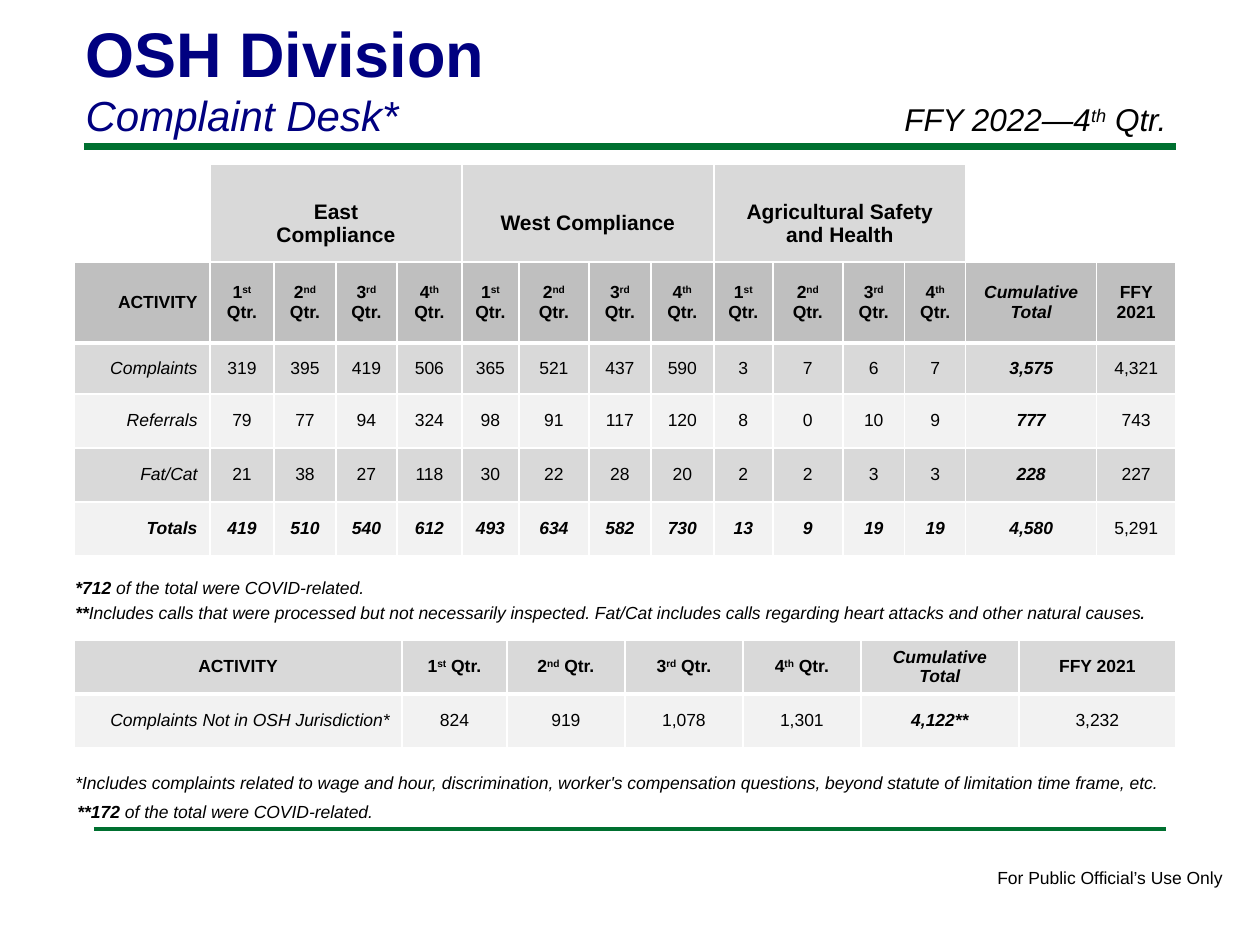
"""Build the OSH Division complaint desk slide with its quarterly activity tables."""
from dataclasses import dataclass

from lxml import etree
from pptx import Presentation, util as u
from pptx.dml.color import RGBColor
from pptx.enum import shapes, text
from pptx.oxml import ns


@dataclass(frozen=True)
class Theme:
    font: str = "Arial"
    navy: str = "000080"
    black: str = "000000"
    green: str = "007030"
    border: str = "FFFFFF"
    dark: str = "BFBFBF"
    mid: str = "D9D9D9"
    light: str = "F2F2F2"
    title: int = 36
    subtitle: int = 24
    period: int = 18
    region: int = 12
    body: int = 10


THEME = Theme()
PX = 914400 // 126
LEFT, CENTER, RIGHT = text.PP_ALIGN.LEFT, text.PP_ALIGN.CENTER, text.PP_ALIGN.RIGHT


def quarter(number, suffix):
    return [(number, ""), (suffix, "^"), (" Qtr.", "")]


QUARTERS = [quarter("1", "st"), quarter("2", "nd"), quarter("3", "rd"), quarter("4", "th")]
SUMMARY = ["Cumulative Total", "FFY 2021"]


def header_styles(quarters):
    return ["b"] * (quarters + 1) + ["bi", "b"]


def value_styles(quarters):
    return ["i"] + [""] * quarters + ["bi", ""]


REGIONS = dict(
    place=(210, 164), widths=[252] * 3, heights=[119], size=THEME.region, first=CENTER,
    rows=[(THEME.mid, ["b"] * 3,
           ["East\nCompliance", "West Compliance", "Agricultural Safety and Health"])])

JURISDICTION = dict(
    place=(74, 640), widths=[328, 105, 118, 118, 118, 158, 157], heights=[54, 54],
    size=THEME.body, first=CENTER,
    rows=[(THEME.mid, header_styles(4), ["ACTIVITY", *QUARTERS, *SUMMARY]),
          (THEME.light, value_styles(4),
           ["Complaints Not in OSH Jurisdiction*", "824", "919", "1,078", "1,301",
            "4,122**", "3,232"])])

ACTIVITY = dict(
    place=(74, 262),
    widths=[136, 64, 62, 61, 65, 57, 70, 62, 63, 59, 70, 62, 61, 131, 79],
    heights=[81, 51, 54, 54, 54], size=THEME.body, first=RIGHT,
    rows=[(THEME.dark, header_styles(12), ["ACTIVITY", *QUARTERS * 3, *SUMMARY]),
          (THEME.mid, value_styles(12),
           ["Complaints", "319", "395", "419", "506", "365", "521", "437", "590",
            "3", "7", "6", "7", "3,575", "4,321"]),
          (THEME.light, value_styles(12),
           ["Referrals", "79", "77", "94", "324", "98", "91", "117", "120",
            "8", "0", "10", "9", "777", "743"]),
          (THEME.mid, value_styles(12),
           ["Fat/Cat", "21", "38", "27", "118", "30", "22", "28", "20",
            "2", "2", "3", "3", "228", "227"]),
          (THEME.light, ["bi"] * 14 + [""],
           ["Totals", "419", "510", "540", "612", "493", "634", "582", "730",
            "13", "9", "19", "19", "4,580", "5,291"])])

COVID = " of the total were COVID-related."
NOTES = [
    ((985, 861, 253, 34), False, THEME.body, "", ["For Public Official’s Use Only"]),
    ((63, 571, 1113, 64), True, THEME.body, "i", [
        [("*712", "b"), (COVID, "")],
        [("**", "b"),
         ("Includes calls that were processed but not necessarily inspected. Fat/Cat includes "
          "calls regarding heart attacks and other natural causes", ""), (".", "+")]]),
    ((63, 766, 1124, 34), True, THEME.body, "i", [
        "*Includes complaints related to wage and hour, discrimination, worker's compensation "
        "questions, beyond statute of limitation time frame, etc."]),
    ((892, 94, 315, 50), True, THEME.period, "i", [
        [("FFY 2022—4", ""), ("th", "^"), (" Qtr.", "")]]),
    ((65, 795, 324, 34), False, THEME.body, "i", [[("**172", "b"), (COVID, "")]]),
]
TITLE_BOX = (73, 8, 1040, 140)
TITLE = [("OSH Division", THEME.title, "b"), ("Complaint Desk*", THEME.subtitle, "i")]
RULES = [(84, 1176, 147, 4), (94, 1166, 829, 2)]


def emu(lengths):
    return [length * PX for length in lengths]


def write(paragraph, content, size, style, color=THEME.black, align=LEFT):
    paragraph.alignment = align
    font = paragraph.font
    font.name, font.size = THEME.font, u.Pt(size)
    font.bold, font.italic = "b" in style, "i" in style
    font.color.rgb = RGBColor.from_string(color)
    for words, mark in [(content, "")] if isinstance(content, str) else content:
        run = paragraph.add_run()
        run.text = words
        if mark == "b":
            run.font.bold = True
        elif mark == "^":
            run._r.get_or_add_rPr().set("baseline", "30000")
        elif mark == "+":
            run.font.size = u.Pt(size + 2)


def paragraphs(frame, count):
    return [frame.paragraphs[0]] + [frame.add_paragraph() for _ in range(count - 1)]


def add_borders(cell, widths):
    properties = cell._tc.get_or_add_tcPr()
    for index, (side, width) in enumerate(widths.items()):
        line = etree.Element(ns.qn(f"a:ln{side}"), w=str(u.Pt(width)))
        fill = etree.SubElement(line, ns.qn("a:solidFill"))
        etree.SubElement(fill, ns.qn("a:srgbClr"), val=THEME.border)
        properties.insert(index, line)


def add_grid(slide, place, widths, heights, size, first, rows):
    frame = slide.shapes.add_table(
        len(rows), len(widths), *emu([*place, sum(widths), sum(heights)]))
    table = frame.table
    table.first_row = table.horz_banding = False
    for column, width in zip(table.columns, emu(widths)):
        column.width = width
    for row, height in zip(table.rows, emu(heights)):
        row.height = height
    for r, (fill, styles, contents) in enumerate(rows):
        borders = {"L": 1, "R": 1, "T": 1 if r == 0 else 3 if r == 1 else 1,
                   "B": 3 if r == 0 else 1}
        for c, (style, content) in enumerate(zip(styles, contents)):
            cell = table.cell(r, c)
            cell.vertical_anchor = text.MSO_ANCHOR.MIDDLE
            cell.fill.solid()
            cell.fill.fore_color.rgb = RGBColor.from_string(fill)
            add_borders(cell, borders)
            align = CENTER if c else first if r == 0 else RIGHT
            parts = content.split("\n") if isinstance(content, str) else [content]
            for paragraph, part in zip(paragraphs(cell.text_frame, len(parts)), parts):
                write(paragraph, part, size, style, align=align)


def add_rule(slide, start, end, y, weight):
    rule = slide.shapes.add_connector(
        shapes.MSO_CONNECTOR.STRAIGHT, *emu([start, y, end, y]))
    rule.line.color.rgb = RGBColor.from_string(THEME.green)
    rule.line.width = u.Pt(weight)
    etree.SubElement(rule._element.spPr, ns.qn("a:effectLst"))


def add_note(slide, box, wrap, size, style, lines):
    frame = slide.shapes.add_textbox(*emu(box)).text_frame
    frame.word_wrap = wrap
    for paragraph, line in zip(paragraphs(frame, len(lines)), lines):
        write(paragraph, line, size, style)


def add_title(slide):
    title = slide.shapes.title
    title.left, title.top, title.width, title.height = emu(TITLE_BOX)
    frame = title.text_frame
    frame.auto_size = text.MSO_AUTO_SIZE.NONE
    frame.vertical_anchor = text.MSO_ANCHOR.TOP
    for paragraph, (words, size, style) in zip(paragraphs(frame, len(TITLE)), TITLE):
        write(paragraph, words, size, style, THEME.navy)


def main():
    deck = Presentation()
    deck.slide_width, deck.slide_height = emu([1260, 945])
    slide = deck.slides.add_slide(deck.slide_layouts[5])
    add_title(slide)
    for rule in RULES:
        add_rule(slide, *rule)
    for grid in (REGIONS, JURISDICTION, ACTIVITY):
        add_grid(slide, **grid)
    for note in NOTES:
        add_note(slide, *note)
    deck.save("out.pptx")


if __name__ == "__main__":
    main()
